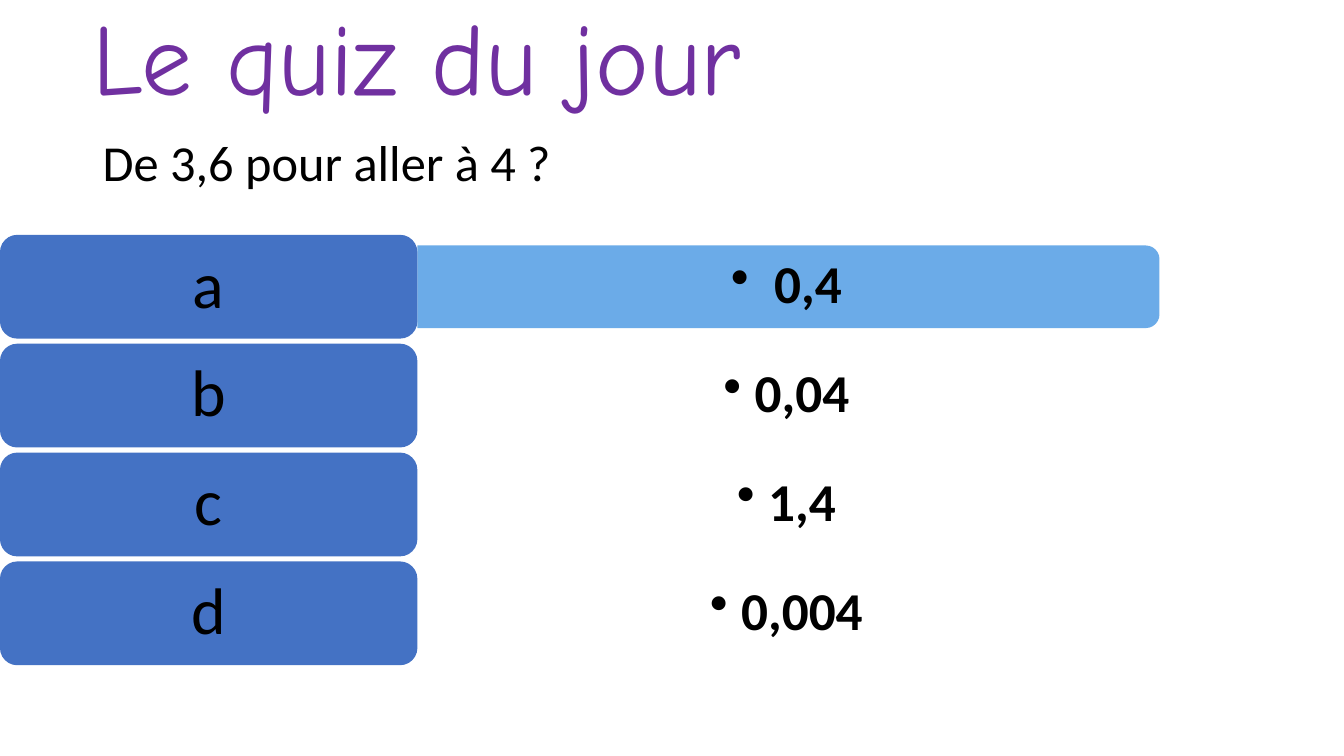
import pptx
import pptx.util
import pptx.dml.color
import pptx.enum.shapes
import pptx.enum.text
import pptx.oxml.ns
import lxml.etree

Inches = pptx.util.Inches
RGBColor = pptx.dml.color.RGBColor
Shapes = pptx.enum.shapes.MSO_SHAPE
Anchor = pptx.enum.text.MSO_ANCHOR
Align = pptx.enum.text.PP_ALIGN
qn = pptx.oxml.ns.qn

BLACK = RGBColor(0x00, 0x00, 0x00)
WHITE = RGBColor(0xFF, 0xFF, 0xFF)
PURPLE = RGBColor(0x70, 0x30, 0xA0)
LETTER_BLUE = RGBColor(0x44, 0x72, 0xC4)
CORRECT_BLUE = RGBColor(0x5C, 0xA2, 0xE6)


def write_text(shape, text, size, font="Calibri", color=BLACK, bold=False,
               align=Align.LEFT, anchor=Anchor.MIDDLE, spacing=0.9,
               insets=(0.1, 0.05, 0.1, 0.05), bullet=False):
    frame = shape.text_frame
    frame.word_wrap = True
    frame.vertical_anchor = anchor
    frame.margin_left, frame.margin_top, frame.margin_right, frame.margin_bottom = map(Inches, insets)
    paragraph = frame.paragraphs[0]
    paragraph.alignment = align
    paragraph.line_spacing = spacing
    run = paragraph.add_run()
    run.text = text
    run.font.size = pptx.util.Pt(size)
    run.font.name = font
    run.font.bold = bold
    run.font.color.rgb = color
    if bullet:
        properties = paragraph._p.get_or_add_pPr()
        properties.set("marL", str(Inches(0.31)))
        properties.set("indent", str(Inches(-0.31)))
        lxml.etree.SubElement(properties, qn("a:buChar")).set("char", "•")


def add_filled_shape(kind, left, top, width, height, color):
    shape = slide.shapes.add_shape(kind, Inches(left), Inches(top), Inches(width), Inches(height))
    shape.shadow.inherit = False
    shape.fill.solid()
    shape.fill.fore_color.rgb = color
    shape.line.fill.background()
    return shape


presentation = pptx.Presentation()
presentation.slide_width = Inches(13.33)
presentation.slide_height = Inches(7.5)
slide = presentation.slides.add_slide(presentation.slide_layouts[6])

answers = [
    ("a", " 0,4", CORRECT_BLUE),
    ("b", "0,04", WHITE),
    ("c", "1,4", WHITE),
    ("d", "0,004", WHITE),
]
first_top, row_pitch = 2.33, 1.08
letter_width, letter_height = 4.14, 1.03
bar_length, bar_thickness = 7.36, 0.82

for row, (letter, answer, bar_color) in enumerate(answers):
    top = first_top + row * row_pitch
    middle = top + letter_height / 2

    bar = add_filled_shape(Shapes.ROUND_2_SAME_RECTANGLE,
                           letter_width + (bar_length - bar_thickness) / 2,
                           middle - bar_length / 2,
                           bar_thickness, bar_length, bar_color)
    bar.rotation = 90
    bar_fill = bar._element.spPr.find(qn("a:solidFill"))[0]
    lxml.etree.SubElement(bar_fill, qn("a:alpha")).set("val", "90000")

    answer_box = slide.shapes.add_textbox(Inches(letter_width), Inches(middle - 0.37),
                                          Inches(7.32), Inches(0.74))
    write_text(answer_box, answer, 38, bold=True, align=Align.CENTER,
               insets=(0.16, 0.08, 0.16, 0.08), bullet=True)

    letter_shape = add_filled_shape(Shapes.ROUNDED_RECTANGLE, 0, top,
                                    letter_width, letter_height, LETTER_BLUE)
    write_text(letter_shape, letter, 47, align=Align.CENTER,
               insets=(0.2, 0.1, 0.2, 0.1))

title = slide.shapes.add_textbox(Inches(0.92), Inches(0.27), Inches(11.5), Inches(1.15))
write_text(title, "Le quiz du jour", 72.5, font="Comic Neue", color=PURPLE,
           anchor=Anchor.BOTTOM, insets=(0, 0, 0, 0.25))

question = slide.shapes.add_textbox(Inches(0.92), Inches(1.25), Inches(6.72), Inches(0.71))
write_text(question, "De 3,6 pour aller à 4 ?", 36, anchor=Anchor.TOP, spacing=1.0)

presentation.save("out.pptx")
